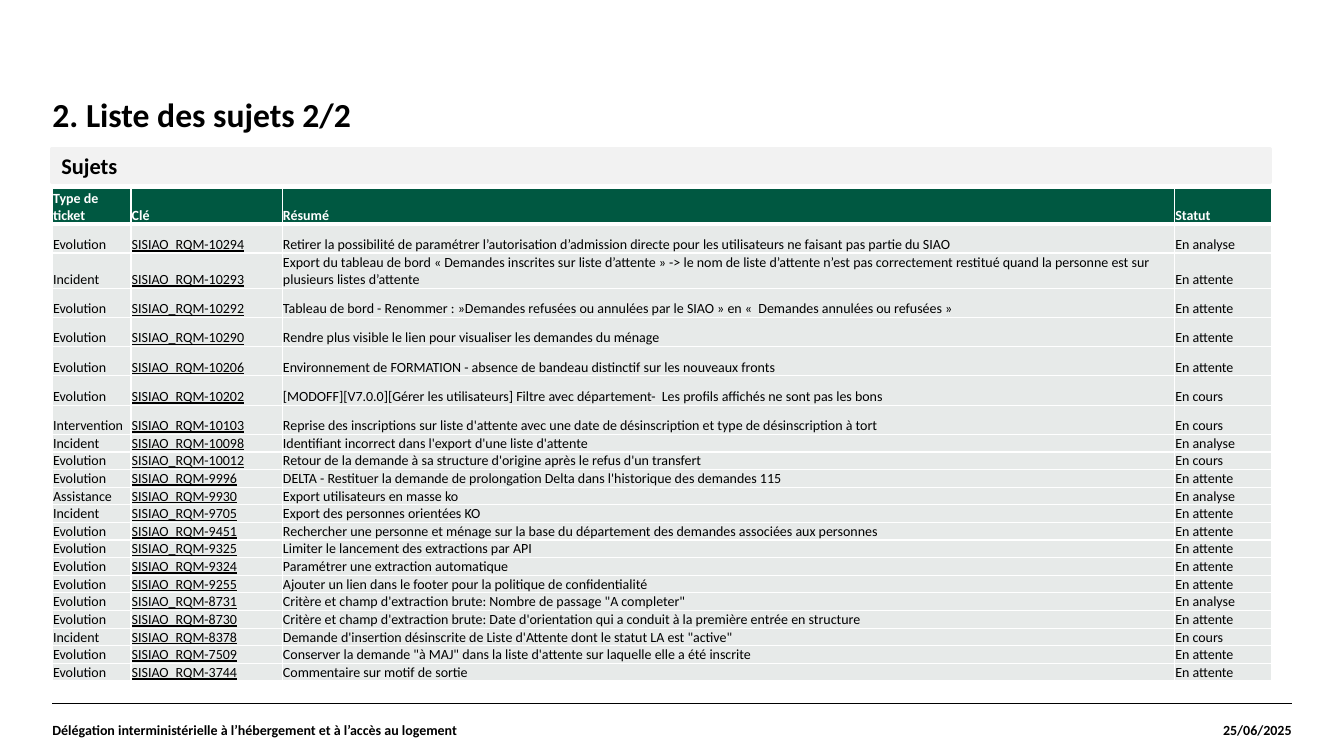
from lxml.etree import SubElement
from pptx import Presentation
from pptx.dml.color import RGBColor
from pptx.enum.shapes import MSO_CONNECTOR, MSO_SHAPE
from pptx.enum.text import MSO_ANCHOR, PP_ALIGN
from pptx.oxml.ns import qn
from pptx.util import Inches, Pt

# Content
TITLE = "2. Liste des sujets 2/2"
BAND = "Sujets"
OWNER = "Délégation interministérielle à l’hébergement et à l’accès au logement"
DATE = "25/06/2025"
HEAD = ("Type de ticket", "Clé", "Résumé", "Statut")
KEY = "SISIAO_RQM-"
TICKETS = [
    ("Evolution", 10294, "Retirer la possibilité de paramétrer l’autorisation d’admission directe "
     "pour les utilisateurs ne faisant pas partie du SIAO", "En analyse"),
    ("Incident", 10293, "Export du tableau de bord « Demandes inscrites sur liste d’attente » -> "
     "le nom de liste d’attente n’est pas correctement restitué quand la personne est sur "
     "plusieurs listes d’attente", "En attente"),
    ("Evolution", 10292, "Tableau de bord - Renommer : »Demandes refusées ou annulées par le SIAO » "
     "en «  Demandes annulées ou refusées »", "En attente"),
    ("Evolution", 10290, "Rendre plus visible le lien pour visualiser les demandes du ménage",
     "En attente"),
    ("Evolution", 10206, "Environnement de FORMATION - absence de bandeau distinctif sur les "
     "nouveaux fronts", "En attente"),
    ("Evolution", 10202, "[MODOFF][V7.0.0][Gérer les utilisateurs] Filtre avec département-  "
     "Les profils affichés ne sont pas les bons", "En cours"),
    ("Intervention", 10103, "Reprise des inscriptions sur liste d'attente avec une date de "
     "désinscription et type de désinscription à tort", "En cours"),
    ("Incident", 10098, "Identifiant incorrect dans l'export d'une liste d'attente", "En analyse"),
    ("Evolution", 10012, "Retour de la demande à sa structure d'origine après le refus d'un "
     "transfert", "En cours"),
    ("Evolution", 9996, "DELTA - Restituer la demande de prolongation Delta dans l'historique des "
     "demandes 115", "En attente"),
    ("Assistance", 9930, "Export utilisateurs en masse ko", "En analyse"),
    ("Incident", 9705, "Export des personnes orientées KO", "En attente"),
    ("Evolution", 9451, "Rechercher une personne et ménage sur la base du département des demandes "
     "associées aux personnes", "En attente"),
    ("Evolution", 9325, "Limiter le lancement des extractions par API", "En attente"),
    ("Evolution", 9324, "Paramétrer une extraction automatique", "En attente"),
    ("Evolution", 9255, "Ajouter un lien dans le footer pour la politique de confidentialité",
     "En attente"),
    ("Evolution", 8731, "Critère et champ d'extraction brute: Nombre de passage \"A completer\"",
     "En analyse"),
    ("Evolution", 8730, "Critère et champ d'extraction brute: Date d'orientation qui a conduit à "
     "la première entrée en structure", "En attente"),
    ("Incident", 8378, "Demande d'insertion désinscrite de Liste d'Attente dont le statut LA est "
     "\"active\"", "En cours"),
    ("Evolution", 7509, "Conserver la demande \"à MAJ\" dans la liste d'attente sur laquelle elle "
     "a été inscrite", "En attente"),
    ("Evolution", 3744, "Commentaire sur motif de sortie", "En attente"),
]

THEME = {
    "font": "Calibri", "ink": "000000", "paper": "FFFFFF",
    "head": "005841", "row": "E7EAE9", "band": "F2F2F2",
    "title": 24, "sub": 16, "small": 10,
}

# Layout, in inches
LEFT, RIGHT, RULE, FOOT = 0.52, 12.81, 6.98, 0.52
COLS = (0.78, 1.5, 8.85, 0.96)
TOP, HIGH = 1.87, 4.89
TALL, MID, SPACED = 0.35, 0.29, 7   # wrapped rows, airy rows, number of airy tickets
WRAPPED = (0, 2)


def tint(name):
    return RGBColor.from_string(THEME[name])


def style(par, size, ink="ink", bold=True):
    font = par.font
    font.name, font.size, font.bold = THEME["font"], Pt(THEME[size]), bold
    font.color.rgb = tint(ink)


def label(slide, text, box, size, anchor, align=PP_ALIGN.LEFT):
    frame = slide.shapes.add_textbox(*map(Inches, box)).text_frame
    frame.word_wrap = True
    frame.vertical_anchor = anchor
    frame.margin_left = frame.margin_right = frame.margin_top = frame.margin_bottom = 0
    par = frame.paragraphs[0]
    par.text, par.alignment = text, align
    style(par, size)
    return par


def edges(cell, widths):
    props = cell._tc.get_or_add_tcPr()
    for side, width in zip("LRTB", widths):
        line = SubElement(props, qn("a:ln" + side), w=str(Pt(width)))
        fill = SubElement(line, qn("a:solidFill"))
        SubElement(fill, qn("a:srgbClr"), val=THEME["paper"])


def grid(slide):
    rows = [HEAD] + [(kind, f"{KEY}{num}", note, state) for kind, num, note, state in TICKETS]
    tall = {i: TALL if i in WRAPPED else MID for i in range(SPACED + 1)}
    short = (HIGH - sum(tall.values())) / (len(rows) - len(tall))
    box = map(Inches, (LEFT, TOP, sum(COLS), HIGH))
    table = slide.shapes.add_table(len(rows), len(COLS), *box).table
    table.horz_banding = False
    for col, width in zip(table.columns, COLS):
        col.width = Inches(width)
    for i, row in enumerate(rows):
        table.rows[i].height = Inches(tall.get(i, short))
        for j, text in enumerate(row):
            cell = table.cell(i, j)
            cell.margin_left = cell.margin_right = cell.margin_top = Inches(0.007)
            cell.margin_bottom = 0
            cell.vertical_anchor = MSO_ANCHOR.BOTTOM
            edges(cell, (1, 1, 3 if i == 1 else 1, 3 if i == 0 else 1))
            cell.fill.solid()
            cell.fill.fore_color.rgb = tint("row" if i else "head")
            par = cell.text_frame.paragraphs[0]
            par.text = text
            style(par, "small", "ink" if i else "paper", i == 0)
            if i and j == 1:
                par.font.underline = True


def main():
    deck = Presentation()
    deck.slide_width, deck.slide_height = Inches(13.33), Inches(7.5)
    slide = deck.slides.add_slide(deck.slide_layouts[6])

    # Footer rule
    ends = map(Inches, (LEFT, RULE, RIGHT, RULE))
    rule = slide.shapes.add_connector(MSO_CONNECTOR.STRAIGHT, *ends)
    rule.line.color.rgb, rule.line.width = tint("ink"), Pt(0.8)
    SubElement(rule._element.spPr, qn("a:effectLst"))

    # Title and footer
    title = label(slide, TITLE, (LEFT, 0.98, RIGHT - LEFT, 1.05), "title", MSO_ANCHOR.TOP)
    title.line_spacing = 0.9
    label(slide, OWNER, (LEFT, RULE, 8.61, FOOT), "small", MSO_ANCHOR.MIDDLE)
    label(slide, DATE, (RIGHT - 1.71, RULE, 1.71, FOOT), "small", MSO_ANCHOR.MIDDLE,
          PP_ALIGN.RIGHT)

    # Section band
    band = slide.shapes.add_shape(MSO_SHAPE.RECTANGLE, *map(Inches, (0.51, 1.47, 12.09, 0.34)))
    band.shadow.inherit = False
    band.fill.solid()
    band.fill.fore_color.rgb = band.line.color.rgb = tint("band")
    band.line.width = Pt(2)
    band.text_frame.vertical_anchor = MSO_ANCHOR.MIDDLE
    par = band.text_frame.paragraphs[0]
    par.text, par.alignment = BAND, PP_ALIGN.LEFT
    style(par, "sub")

    # Ticket table
    grid(slide)
    deck.save("out.pptx")


if __name__ == "__main__":
    main()
